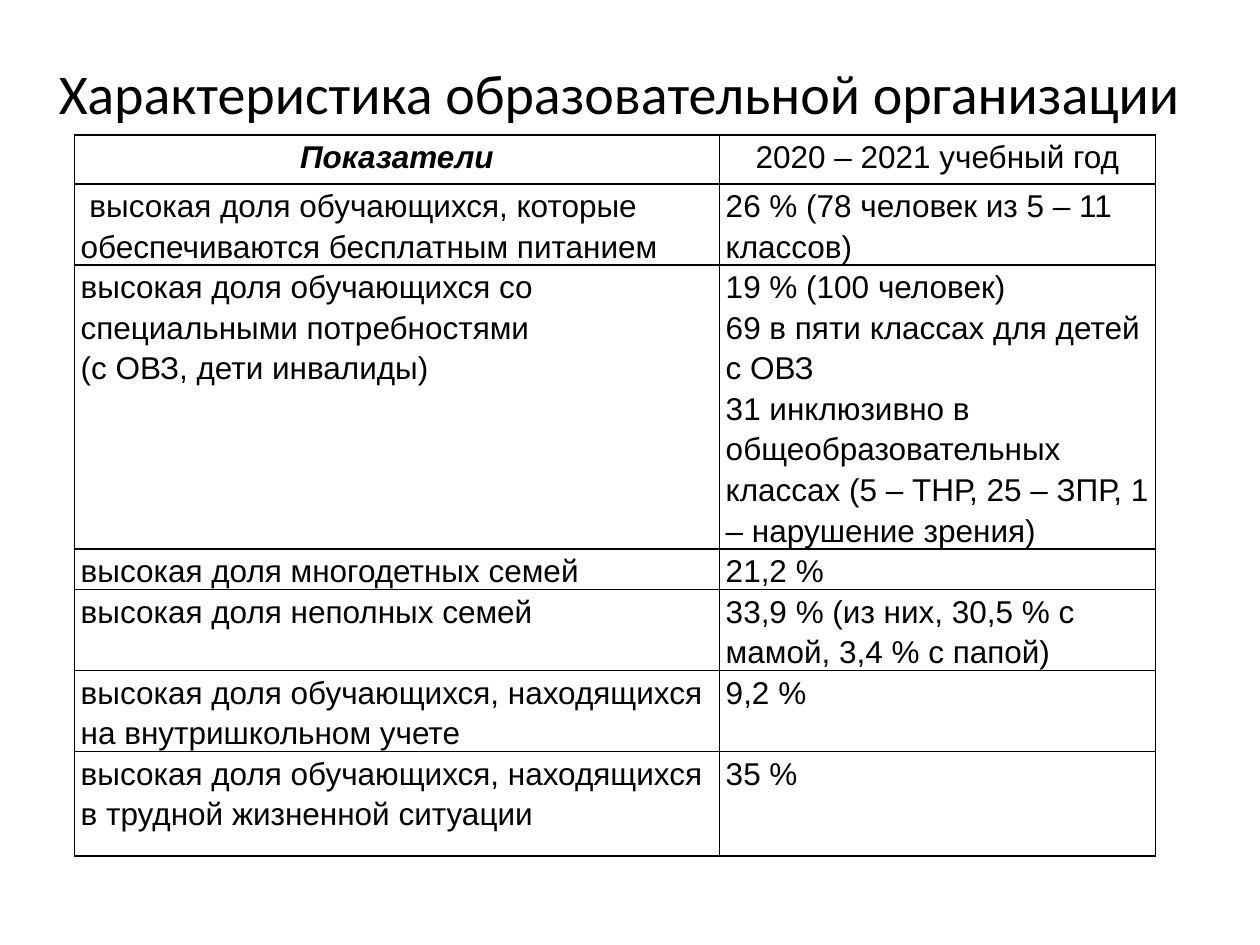
import pptx
import pptx.dml.color
import pptx.enum.text
import pptx.util
from dataclasses import dataclass
from lxml import etree
from pptx.oxml.ns import qn

WIDE, HIGH = 10, 7.5
COLORS = {"ink": "000000", "paper": "FFFFFF"}
ALIGN = pptx.enum.text.PP_ALIGN
COLS = (5.12, 3.46)


@dataclass
class Row:
    high: float
    left: str
    right: str
    after: int = 0
    head: bool = False


ROWS = (
    Row(0.39, "Показатели", "2020 – 2021 учебный год", 10, True),
    Row(0.57, " высокая доля обучающихся, которые обеспечиваются бесплатным питанием",
        "26 % (78 человек из 5 – 11 классов)"),
    Row(1.99, "высокая доля обучающихся со специальными потребностями\n"
              "(с ОВЗ, дети инвалиды)",
        "19 % (100 человек)\n69 в пяти классах для детей с ОВЗ\n"
        "31 инклюзивно в общеобразовательных классах "
        "(5 – ТНР, 25 – ЗПР, 1 – нарушение зрения)"),
    Row(0.28, "высокая доля многодетных семей", "21,2 %"),
    Row(0.57, "высокая доля неполных семей",
        "33,9 % (из них, 30,5 % с мамой, 3,4 % с папой)"),
    Row(0.56, "высокая доля обучающихся, находящихся на внутришкольном учете",
        "9,2 %", 10),
    Row(0.83, "высокая доля обучающихся, находящихся в трудной жизненной ситуации",
        "35 %", 10),
)


def color(name: str) -> pptx.dml.color.RGBColor:
    return pptx.dml.color.RGBColor.from_string(COLORS[name])


def box(x: float, y: float, w: float, h: float) -> list:
    """Turn shares of the slide into lengths."""
    return [pptx.util.Inches(n) for n in (x * WIDE, y * HIGH, w * WIDE, h * HIGH)]


def style(para, face: str, size: int, bold: bool = False) -> None:
    for run in para.runs:
        font = run.font
        font.name, font.size = face, pptx.util.Pt(size)
        font.bold = font.italic = bold
        font.color.rgb = color("ink")


def border(cell) -> None:
    """Rule all four sides; lines must come before the fill."""
    props = cell._tc.get_or_add_tcPr()
    for spot, side in enumerate(("a:lnL", "a:lnR", "a:lnT", "a:lnB")):
        line = etree.Element(qn(side), w=str(pptx.util.Pt(1)))
        fill = etree.SubElement(line, qn("a:solidFill"))
        etree.SubElement(fill, qn("a:srgbClr"), val=COLORS["ink"])
        props.insert(spot, line)


def fill(cell, text: str, row: Row, bold: bool) -> None:
    cell.margin_left = cell.margin_right = pptx.util.Inches(0.05)
    cell.margin_top = cell.margin_bottom = 0
    cell.fill.solid()
    cell.fill.fore_color.rgb = color("paper")
    border(cell)
    cell.text_frame.text = text
    for para in cell.text_frame.paragraphs:
        para.alignment = ALIGN.CENTER if row.head else ALIGN.LEFT
        para.line_spacing = 1.15
        para.space_after = pptx.util.Pt(row.after)
        style(para, "Arial", 18, bold)


def grid(slide) -> None:
    high = sum(row.high for row in ROWS)
    place = box(0.059, 1.07 / HIGH, sum(COLS) / WIDE, high / HIGH)
    table = slide.shapes.add_table(len(ROWS), len(COLS), *place).table
    table.horz_banding = False
    for col, wide in zip(table.columns, COLS):
        col.width = pptx.util.Inches(wide)
    for r, row in enumerate(ROWS):
        table.rows[r].height = pptx.util.Inches(row.high)
        for c, text in enumerate((row.left, row.right)):
            fill(table.cell(r, c), text, row, row.head and c == 0)


def title(slide, text: str) -> None:
    frame = slide.shapes.add_textbox(*box(0.035, 0.039, 0.914, 0.116)).text_frame
    frame.word_wrap = True
    frame.margin_left = frame.margin_right = pptx.util.Inches(0.05)
    frame.vertical_anchor = pptx.enum.text.MSO_ANCHOR.MIDDLE
    frame.text = text
    frame.paragraphs[0].alignment = ALIGN.CENTER
    style(frame.paragraphs[0], "Calibri", 32)


def main() -> None:
    deck = pptx.Presentation()
    deck.slide_width = pptx.util.Inches(WIDE)
    deck.slide_height = pptx.util.Inches(HIGH)
    slide = deck.slides.add_slide(deck.slide_layouts[6])
    # Table of indicators, then the heading above it
    grid(slide)
    title(slide, "Характеристика образовательной организации")
    deck.save("out.pptx")


if __name__ == "__main__":
    main()
